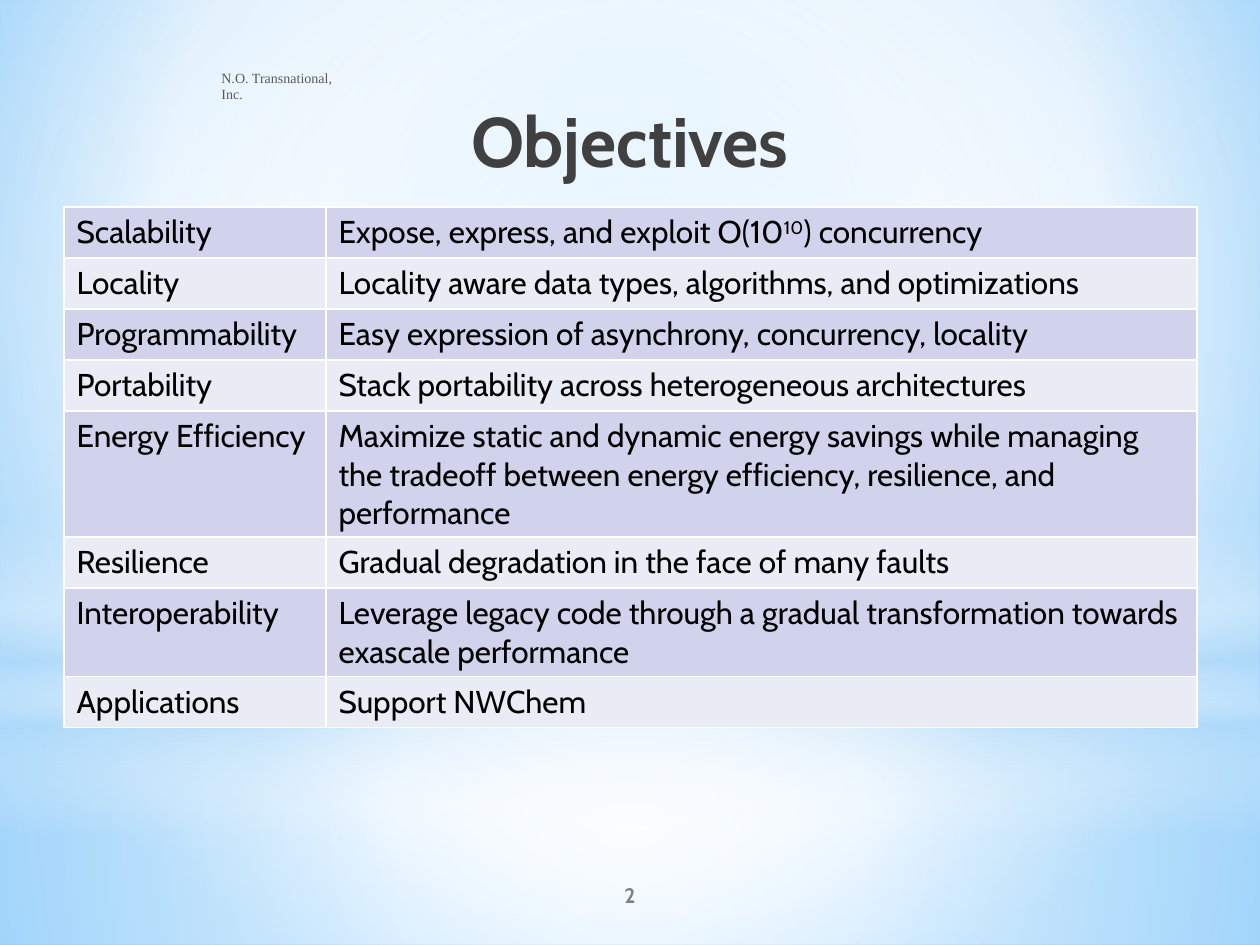
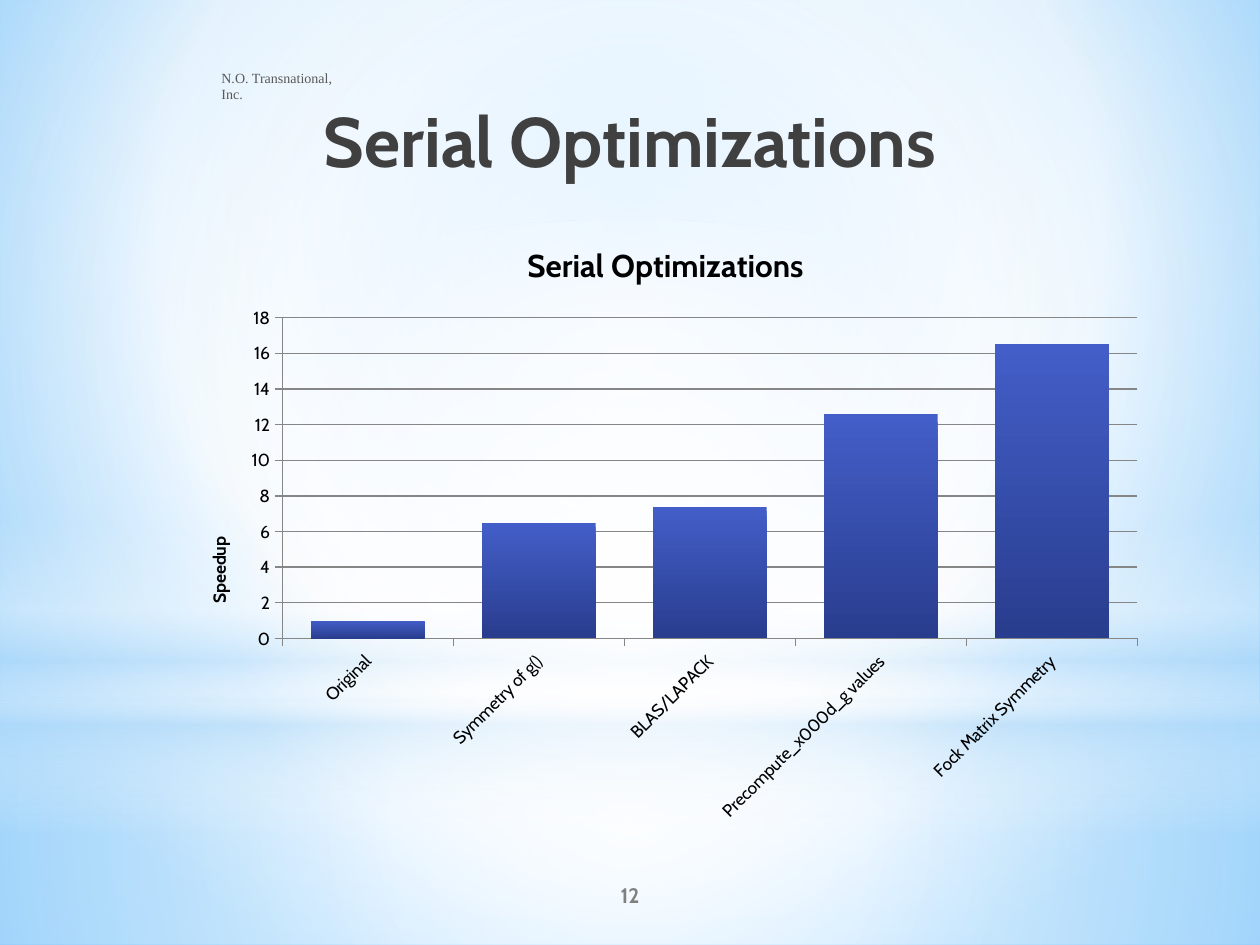
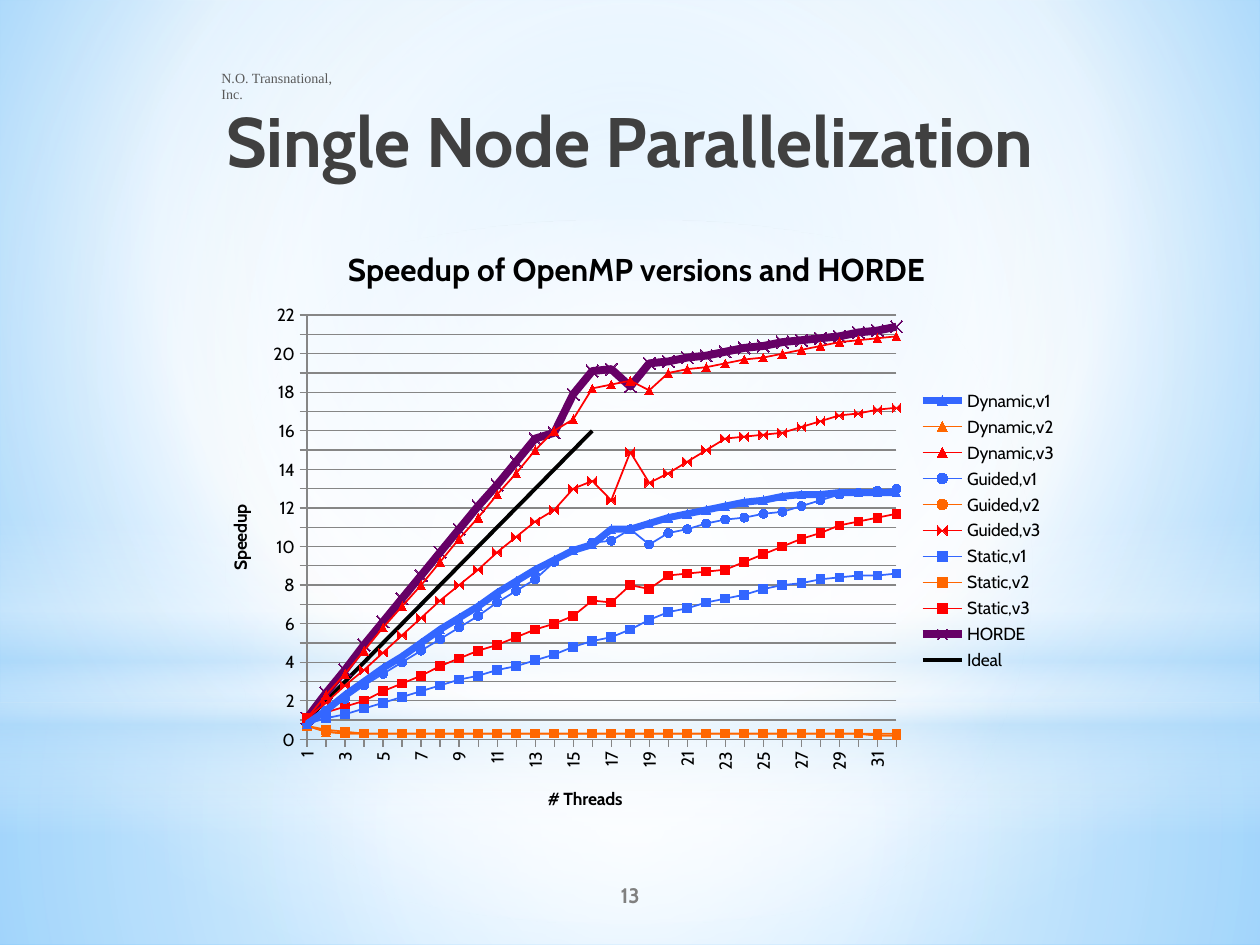
from itertools import pairwise

from lxml import etree
from pptx import Presentation
from pptx.chart.data import CategoryChartData, XyChartData
from pptx.dml.color import RGBColor
from pptx.enum.chart import (XL_CHART_TYPE, XL_LEGEND_POSITION,
                             XL_MARKER_STYLE, XL_TICK_MARK)
from pptx.enum.shapes import MSO_SHAPE
from pptx.enum.text import MSO_ANCHOR, PP_ALIGN
from pptx.oxml import parse_xml
from pptx.oxml.ns import nsdecls, qn
from pptx.util import Emu, Pt

RECTANGLE, OVAL = MSO_SHAPE.RECTANGLE, MSO_SHAPE.OVAL
LEFT, CENTER = PP_ALIGN.LEFT, PP_ALIGN.CENTER
TOP, MIDDLE = MSO_ANCHOR.TOP, MSO_ANCHOR.MIDDLE
COLUMNS, SMOOTH_XY = XL_CHART_TYPE.COLUMN_CLUSTERED, XL_CHART_TYPE.XY_SCATTER_SMOOTH
LEGEND_RIGHT = XL_LEGEND_POSITION.RIGHT
TICK_OUT = XL_TICK_MARK.OUTSIDE
AUTO, NO_MARKER = XL_MARKER_STYLE.AUTOMATIC, XL_MARKER_STYLE.NONE
TRIANGLE, CIRCLE = XL_MARKER_STYLE.TRIANGLE, XL_MARKER_STYLE.CIRCLE
SQUARE, CROSS = XL_MARKER_STYLE.SQUARE, XL_MARKER_STYLE.X

BLACK = RGBColor.from_string("000000")
WHITE = RGBColor.from_string("FFFFFF")
TITLE_GRAY = RGBColor.from_string("404040")
COMPANY_GRAY = RGBColor.from_string("595959")
NUMBER_GRAY = RGBColor.from_string("808080")
AXIS_GRAY = RGBColor.from_string("868686")
ROW_DARK = RGBColor.from_string("D0D3EB")
ROW_LIGHT = RGBColor.from_string("E9EBF5")
SKY = RGBColor.from_string("9ED5FF")
DEEP_SKY = RGBColor.from_string("5BB9FF")
PALE_BLUE = RGBColor.from_string("B4DCFA")
BAR_TOP = RGBColor.from_string("435EC8")
BAR_BOTTOM = RGBColor.from_string("293D8E")
BLUE = RGBColor.from_string("3366FF")
ORANGE = RGBColor.from_string("FF6600")
RED = RGBColor.from_string("FF0000")
PURPLE = RGBColor.from_string("660066")

FONT, COMPANY_FONT = "Cabin", "Times New Roman"
COMPANY = "N.O. Transnational, Inc."
EMU_PER_PX = 914400 / 126
DEGREE = 60000
CENTERED = (50, 50, 50, 50)

# Shared bands: shape, box, gradient stops (position, colour, opacity), focus
BANDS = [
    (RECTANGLE, (0, 703, 1260, 242),
     [(0, WHITE, 91), (37, WHITE, 76), (100, PALE_BLUE, 79)], CENTERED),
    (RECTANGLE, (0, 0, 1260, 703),
     [(0, WHITE, 89), (48, WHITE, 62), (100, PALE_BLUE, 79)], CENTERED),
    (RECTANGLE, (0, 519, 1260, 315),
     [(0, WHITE, 0), (29, WHITE, 30), (45, PALE_BLUE, 40), (55, WHITE, 26),
      (65, PALE_BLUE, 60), (100, WHITE, 0)], None),
    (OVAL, (0, 220, 1260, 703), [(0, WHITE, 100), (56, WHITE, 0)], CENTERED),
]

# Text between carets is raised
OBJECTIVES = [
    ("Scalability", "Expose, express, and exploit O(10^10^) concurrency"),
    ("Locality", "Locality aware data types, algorithms, and optimizations"),
    ("Programmability", "Easy expression of asynchrony, concurrency, locality"),
    ("Portability", "Stack portability across heterogeneous architectures"),
    ("Energy Efficiency", "Maximize static and dynamic energy savings while managing "
     "the tradeoff between energy efficiency, resilience, and performance"),
    ("Resilience", "Gradual degradation in the face of many faults"),
    ("Interoperability", "Leverage legacy code through a gradual transformation "
     "towards exascale performance"),
    ("Applications", "Support NWChem"),
]

SERIAL_SPEEDUPS = {
    "Original": 1, "Symmetry of g()": 6.5, "BLAS/LAPACK": 7.4,
    "Precompute_x000d_g values": 12.6, "Fock Matrix Symmetry": 16.5,
}

# Thread counts where the curves bend; speedups between them lie on straight lines
BENDS = [1, 4, 8, *range(13, 20), *range(20, 33, 3)]


def between_bends(*speedups):
    curve = [speedups[0]]
    for (start, low), (end, high) in pairwise(zip(BENDS, speedups)):
        slope = (high - low) / (end - start)
        curve += [round(low + slope * step, 1) for step in range(1, end - start + 1)]
    return curve


FLAT_V2 = [0.7, 0.4] + [0.3] * 28 + [0.2] * 2
# Name, colour, line width, marker, marker size, speedup for 1, 2, 3... threads
THREAD_SERIES = [
    ("Dynamic,v1", BLUE, 4, TRIANGLE, 5, between_bends(
        0.8, 3, 5.7, 8.8, 9.3, 9.8, 10.1, 10.9, 10.9, 11.2, 11.5, 12.1, 12.6, 12.8, 12.8)),
    ("Dynamic,v2", ORANGE, 1, TRIANGLE, 5, FLAT_V2),
    ("Dynamic,v3", RED, 1, AUTO, 5, between_bends(
        1.1, 4.6, 9.2, 15, 16, 16.6, 18.2, 18.4, 18.6, 18.1, 19, 19.5, 20, 20.6, 20.9)),
    ("Guided,v1", BLUE, 1, CIRCLE, 5, between_bends(
        0.8, 2.8, 5.2, 8.3, 9.2, 9.8, 10.2, 10.3, 10.9, 10.1, 10.7, 11.4, 11.8, 12.7, 13)),
    ("Guided,v2", ORANGE, 1, CIRCLE, 5, FLAT_V2),
    ("Guided,v3", RED, 1, AUTO, 5, between_bends(
        1.1, 3.6, 7.2, 11.3, 11.9, 13, 13.4, 12.4, 14.9, 13.3, 13.8, 15.6, 15.9, 16.8, 17.2)),
    ("Static,v1", BLUE, 1, SQUARE, 5, between_bends(
        0.8, 1.6, 2.8, 4.1, 4.4, 4.8, 5.1, 5.3, 5.7, 6.2, 6.6, 7.3, 8, 8.4, 8.6)),
    ("Static,v2", ORANGE, 1, SQUARE, 5, [0.7, 0.5, 0.4] + [0.3] * 29),
    ("Static,v3", RED, 1, SQUARE, 5, between_bends(
        1.1, 2, 3.8, 5.7, 6, 6.4, 7.2, 7.1, 8, 7.8, 8.5, 8.8, 10, 11.1, 11.7)),
    ("HORDE", PURPLE, 4.5, CROSS, 7, between_bends(
        1.1, 4.9, 9.7, 15.6, 15.9, 17.9, 19.1, 19.2, 18.3, 19.5, 19.6, 20.1, 20.6, 20.9,
        21.4)),
    ("Ideal", BLACK, 2.25, NO_MARKER, 5, list(range(1, 17))),
]


def px(length):
    return Emu(round(length * EMU_PER_PX))


def place(box):
    return [px(length) for length in box]


def set_font(font, size, color, bold=False, name=FONT):
    font.size, font.name, font.bold = Pt(size), name, bold
    font.color.rgb = color


def set_gradient(element, stops, focus=None):
    """Swap the element's solid fill for a circular or top-down gradient."""
    stop_xml = "".join(
        f'<a:gs pos="{position * 1000}"><a:srgbClr val="{color}">'
        f'<a:alpha val="{opacity * 1000}"/></a:srgbClr></a:gs>'
        for position, color, opacity in stops)
    if focus:
        sides = " ".join(f'{side}="{part * 1000}"' for side, part in zip("ltrb", focus))
        direction = f'<a:path path="circle"><a:fillToRect {sides}/></a:path>'
    else:
        direction = f'<a:lin ang="{90 * DEGREE}" scaled="0"/>'
    solid = element.find(".//" + qn("a:solidFill"))
    solid.getparent().replace(solid, parse_xml(
        f'<a:gradFill {nsdecls("a")} rotWithShape="1"><a:gsLst>{stop_xml}</a:gsLst>'
        f'{direction}</a:gradFill>'))


def add_text(slide, box, text, size, color, bold=False, name=FONT,
             align=CENTER, anchor=MIDDLE):
    frame = slide.shapes.add_textbox(*place(box)).text_frame
    frame.word_wrap, frame.vertical_anchor = True, anchor
    paragraph = frame.paragraphs[0]
    paragraph.text, paragraph.alignment = text, align
    set_font(paragraph.font, size, color, bold, name)


def add_band(slide, kind, box, stops, focus):
    band = slide.shapes.add_shape(kind, *place(box))
    band.shadow.inherit = False
    band.line.fill.background()
    band.fill.solid()
    set_gradient(band.element, stops, focus)


def add_base_slide(deck, title, number):
    slide = deck.slides.add_slide(deck.slide_layouts[6])
    for band in BANDS:
        add_band(slide, *band)
    add_text(slide, (209, 63, 148, 46), COMPANY, 8, COMPANY_GRAY,
             name=COMPANY_FONT, align=LEFT, anchor=TOP)
    add_text(slide, (63, 91, 1134, 98), title, 40, TITLE_GRAY, bold=True)
    add_text(slide, (590, 870, 80, 50), str(number), 12, NUMBER_GRAY, bold=True)
    return slide


# Table
def fill_cell(cell, text, color):
    paragraph = cell.text_frame.paragraphs[0]
    for index, part in enumerate(text.split("^")):
        run = paragraph.add_run()
        run.text = part
        if index % 2:
            run._r.get_or_add_rPr().set("baseline", "30000")
    set_font(paragraph.font, 18, BLACK)
    properties = cell._tc.get_or_add_tcPr()
    for side in ("lnL", "lnR", "lnT", "lnB"):
        properties.append(parse_xml(
            f'<a:{side} {nsdecls("a")} w="12700"><a:solidFill>'
            f'<a:srgbClr val="{WHITE}"/></a:solidFill></a:{side}>'))
    cell.fill.solid()
    cell.fill.fore_color.rgb = color


def add_objectives_table(slide):
    row_height, widths = 51, (262, 871)
    table = slide.shapes.add_table(
        len(OBJECTIVES), 2,
        *place((64, 207, sum(widths), row_height * len(OBJECTIVES)))).table
    table.first_row = table.horz_banding = False
    for column, width in zip(table.columns, widths):
        column.width = px(width)
    for index, objective in enumerate(OBJECTIVES):
        table.rows[index].height = px(row_height)
        for cell, text in zip(table.rows[index].cells, objective):
            fill_cell(cell, text, ROW_LIGHT if index % 2 else ROW_DARK)


# Charts
def set_layout(parent, **values):
    """Give a chart part a fixed place, in fractions of the chart."""
    layout = parent.find(qn("c:layout"))
    if layout is None:
        layout = etree.Element(qn("c:layout"))
        parent.insert(0, layout)
    manual = etree.SubElement(layout, qn("c:manualLayout"))
    if "w" in values:
        etree.SubElement(manual, qn("c:layoutTarget")).set("val", "inner")
    for key in ("xMode", "yMode"):
        etree.SubElement(manual, qn("c:" + key)).set("val", "edge")
    for key, value in values.items():
        etree.SubElement(manual, qn("c:" + key)).set("val", str(value))


def rotate_text(element, degrees):
    body = element.find(".//" + qn("a:bodyPr"))
    body.set("rot", str(degrees * DEGREE))
    body.set("vert", "horz")


def set_title(owner_title, text, size):
    paragraph = owner_title.text_frame.paragraphs[0]
    paragraph.text = text
    set_font(paragraph.font, size, BLACK, bold=True)


def style_axis(axis, label_turn=0):
    axis.major_tick_mark = TICK_OUT
    axis.format.line.color.rgb = AXIS_GRAY
    set_font(axis.tick_labels.font, 10, BLACK)
    if label_turn:
        rotate_text(axis.tick_labels._element.find(qn("c:txPr")), label_turn)


def add_speedup_chart(slide, kind, box, data, title, label_turn, top, step):
    chart = slide.shapes.add_chart(kind, *place(box), data).chart
    set_font(chart.font, 10, BLACK)
    chart.has_legend = False
    chart.plots[0].vary_by_categories = False
    set_title(chart.chart_title, title, 18)
    style_axis(chart.category_axis, label_turn)
    chart.category_axis.has_major_gridlines = False
    speedup = chart.value_axis
    style_axis(speedup)
    speedup.minimum_scale, speedup.maximum_scale, speedup.major_unit = 0, top, step
    speedup.major_gridlines.format.line.color.rgb = AXIS_GRAY
    set_title(speedup.axis_title, "Speedup", 10)
    rotate_text(speedup.axis_title._element, -90)
    return chart


def plot_area(chart):
    return chart._chartSpace.find(".//" + qn("c:plotArea"))


def add_serial_chart(slide):
    data = CategoryChartData()
    data.categories = list(SERIAL_SPEEDUPS)
    data.add_series("Series 1", list(SERIAL_SPEEDUPS.values()))
    chart = add_speedup_chart(slide, COLUMNS, (174, 219, 983, 617), data,
                              "Serial Optimizations", -45, top=18, step=2)
    set_layout(plot_area(chart), x=0.11, y=0.16, w=0.87, h=0.52)
    set_layout(chart.value_axis.axis_title._element, x=0.03, y=0.51)
    chart.plots[0].gap_width = 50
    chart.plots[0].series[0].format.fill.solid()
    set_gradient(plot_area(chart).find(".//" + qn("c:ser")),
                 [(0, BAR_TOP, 100), (100, BAR_BOTTOM, 100)])


def add_threads_chart(slide):
    data = XyChartData()
    for name, *_, speedups in THREAD_SERIES:
        points = data.add_series(name)
        for threads, speedup in enumerate(speedups, start=1):
            points.add_data_point(threads, speedup)
    chart = add_speedup_chart(slide, SMOOTH_XY, (203, 223, 867, 615), data,
                              "Speedup of OpenMP versions and HORDE", -90, top=22, step=1)
    set_layout(plot_area(chart), x=0.12, y=0.15, w=0.68, h=0.69)
    threads_axis = chart.category_axis
    threads_axis.minimum_scale, threads_axis.maximum_scale = 1, 32
    threads_axis.major_unit = 1
    set_title(threads_axis.axis_title, "# Threads", 10)
    chart.has_legend = True
    chart.legend.position = LEGEND_RIGHT
    chart.legend.include_in_layout = False
    set_font(chart.legend.font, 10, BLACK)
    for curve, (_, color, width, style, size, _) in zip(chart.plots[0].series, THREAD_SERIES):
        curve.format.line.color.rgb = color
        curve.format.line.width = Pt(width)
        curve.marker.style, curve.marker.size = style, size
        curve.marker.format.fill.solid()
        curve.marker.format.fill.fore_color.rgb = color
        curve.marker.format.line.color.rgb = color


def main():
    deck = Presentation()
    deck.slide_width, deck.slide_height = px(1260), px(945)

    # Shared background
    master = deck.slide_master
    master.background.fill.solid()
    set_gradient(master.element, [(0, SKY, 100), (60, WHITE, 100), (100, DEEP_SKY, 100)],
                 focus=(20, 10, 20, 60))

    add_objectives_table(add_base_slide(deck, "Objectives", 2))
    add_serial_chart(add_base_slide(deck, "Serial Optimizations", 12))
    add_threads_chart(add_base_slide(deck, "Single Node Parallelization", 13))
    deck.save("out.pptx")


if __name__ == "__main__":
    main()
